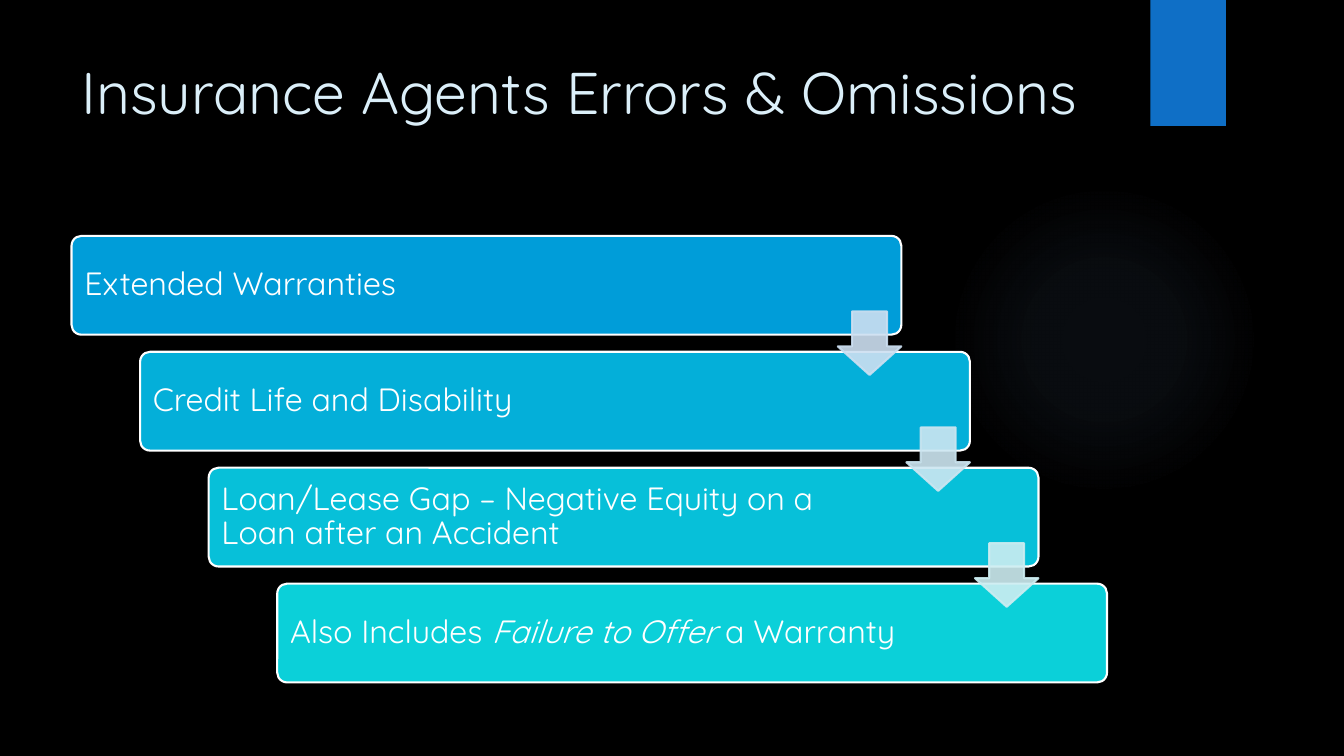
from dataclasses import dataclass

from pptx import Presentation, util as u
from pptx.dml import color
from pptx.enum import shapes, text
from pptx.oxml import parse_xml
from pptx.oxml.ns import nsdecls, qn
from pptx.shapes.autoshape import Shape
from pptx.slide import Slide
from pptx.text.text import Font

WIDE, HIGH = 13.33, 7.5
LEFT, TOP = 0.71, 2.34
COL, ROW = 0.68, 1.15
BAR_W, BAR_H = 8.23, 0.98
ARROW, DROP = 0.63, 0.75
FACE = "Quicksand"
KIND = shapes.MSO_SHAPE


@dataclass(frozen=True)
class Box:
    x: float
    y: float
    w: float
    h: float

    def emu(self) -> list[int]:
        return [u.Inches(n) for n in (self.x, self.y, self.w, self.h)]


@dataclass(frozen=True)
class Bit:
    words: str
    slant: bool = False


@dataclass(frozen=True)
class Step:
    fill: str
    bits: tuple[Bit, ...]
    arrow: str = ""


STEPS = (
    Step("009DD9", (Bit("Extended Warranties"),), "CCDFF1"),
    Step("04AFD9", (Bit("Credit Life and Disability"),), "CCE6F1"),
    Step("07C0D9", (Bit("Loan/Lease Gap – Negative Equity on a Loan after an Accident"),), "CCEDF1"),
    Step("0BD0D9", (Bit("Also Includes "), Bit("Failure to Offer ", True), Bit("a Warranty"))),
)


def tint(code: str) -> color.RGBColor:
    return color.RGBColor.from_string(code)


def style(font: Font, size: float, code: str, slant: bool = False) -> None:
    font.name = FACE
    font.size = u.Pt(size)
    font.italic = slant
    font.color.rgb = tint(code)


def draw(slide: Slide, kind: KIND, box: Box, fill: str, line: str = "") -> Shape:
    shape = slide.shapes.add_shape(kind, *box.emu())
    shape.shadow.inherit = False
    shape.fill.solid()
    shape.fill.fore_color.rgb = tint(fill)
    if line:
        shape.line.color.rgb = tint(line)
        shape.line.width = u.Pt(1.5)
    else:
        shape.line.fill.background()
    return shape


def add_glow(slide: Slide) -> None:
    shape = draw(slide, KIND.OVAL, Box(9.41, 1.83, 3.08, 3.08), "82B1E5")
    stops = "".join(
        f'<a:gs pos="{at * 1000}"><a:srgbClr val="82B1E5"><a:alpha val="{rate * 1000}"/></a:srgbClr></a:gs>'
        for at, rate in ((0, 7), (36, 6), (69, 0))
    )
    fade = parse_xml(
        f'<a:gradFill {nsdecls("a")}><a:gsLst>{stops}</a:gsLst><a:path path="circle">'
        '<a:fillToRect l="50000" t="50000" r="50000" b="50000"/></a:path></a:gradFill>'
    )
    props = shape.element.spPr
    props.replace(props.find(qn("a:solidFill")), fade)


def add_title(slide: Slide) -> None:
    frame = slide.shapes.add_textbox(*Box(LEFT, 0.5, 10.29, 1.53).emu()).text_frame
    frame.word_wrap = True
    frame.text = "Insurance Agents Errors & Omissions"
    style(frame.paragraphs[0].runs[0].font, 42, "DBEFF9")


def add_bar(slide: Slide, rank: int, step: Step) -> None:
    box = Box(LEFT + rank * COL, TOP + rank * ROW, BAR_W, BAR_H)
    bar = draw(slide, KIND.ROUNDED_RECTANGLE, box, step.fill, "FFFFFF")
    bar.adjustments[0] = 0.1
    frame = bar.text_frame
    frame.word_wrap = True
    frame.vertical_anchor = text.MSO_ANCHOR.MIDDLE
    frame.margin_left = frame.margin_top = frame.margin_bottom = u.Inches(0.1)
    frame.margin_right = u.Inches(1.4)
    para = frame.paragraphs[0]
    para.alignment = text.PP_ALIGN.LEFT
    para.line_spacing = 0.9
    for bit in step.bits:
        run = para.add_run()
        run.text = bit.words
        style(run.font, 23, "FFFFFF", bit.slant)


def add_arrow(slide: Slide, rank: int, code: str) -> None:
    x = LEFT + rank * COL + BAR_W - ARROW
    y = TOP + rank * ROW + DROP
    arrow = draw(slide, KIND.DOWN_ARROW, Box(x, y, ARROW, ARROW), code, code)
    arrow.adjustments[0] = 0.55
    arrow.adjustments[1] = 0.45
    for node in arrow.element.spPr.iter(qn("a:srgbClr")):
        node.append(parse_xml(f'<a:alpha {nsdecls("a")} val="90000"/>'))


def main() -> None:
    deck = Presentation()
    deck.slide_width, deck.slide_height = u.Inches(WIDE), u.Inches(HIGH)
    slide = deck.slides.add_slide(deck.slide_layouts[6])
    slide.background.fill.solid()
    slide.background.fill.fore_color.rgb = tint("000000")
    add_glow(slide)
    draw(slide, KIND.RECTANGLE, Box(11.41, 0, 0.75, HIGH / 6), "0F6FC6")
    add_title(slide)
    for rank, step in enumerate(STEPS):
        add_bar(slide, rank, step)
    for rank, step in enumerate(STEPS):
        if step.arrow:
            add_arrow(slide, rank, step.arrow)
    deck.save("out.pptx")


if __name__ == "__main__":
    main()
